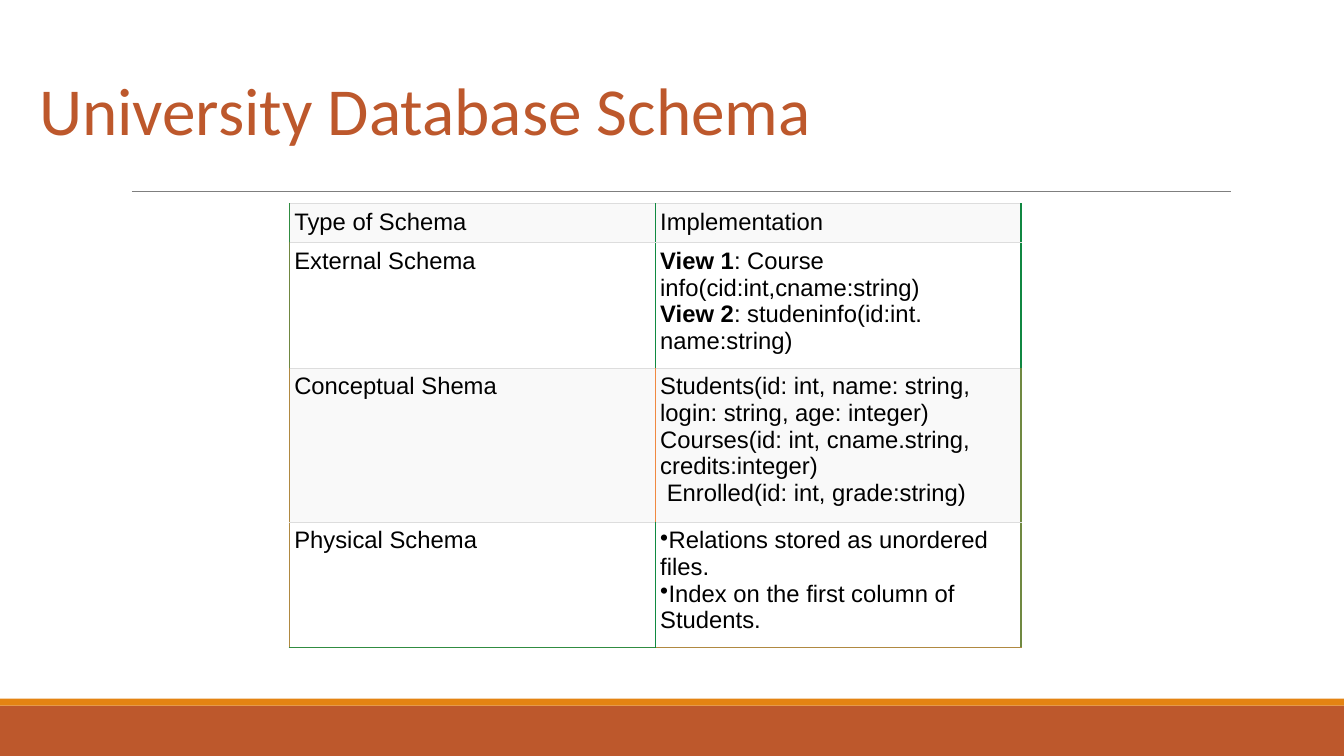
from lxml import etree
from pptx import Presentation
from pptx import util as u
from pptx.dml.color import RGBColor
from pptx.enum import shapes, text
from pptx.oxml.ns import qn

RUST = "BD582C"
ORANGE = "E48312"
GREY = "7F7F7F"
ROW_LINE = "DDDDDD"
BANDS = ("F9F9F9", "FFFFFF")

ROW_HEIGHTS = (28, 89.5, 110, 89.5)
COLUMN_WIDTH = 261.4
# Colours of the vertical lines, left to right, for each row
COLUMN_LINES = (
    ("308C41", "108A41", "108741"),
    ("708741", "108A41", "108741"),
    ("B08941", "F08941", "708941"),
    ("B08941", "108A41", "708941"),
)
BOTTOM_LINES = ("308C41", "B08941")

# Each cell is a list of paragraphs, each paragraph a list of (text, bold)
SCHEMA_ROWS = (
    ([[("Type of Schema", False)]], [[("Implementation", False)]]),
    (
        [[("External Schema", False)]],
        [[("View 1", True), (": Course info(cid:int,cname:string)", False),
          ("\n", False),
          ("View 2", True), (": studeninfo(id:int. name:string)", False)]],
    ),
    (
        [[("Conceptual Shema", False)]],
        [[("Students(id: int, name: string, login: string, age: integer)", False)],
         [("Courses(id: int, cname.string, credits:integer)", False)],
         [(" Enrolled(id: int, grade:string)", False)]],
    ),
    (
        [[("Physical Schema", False)]],
        [[("Relations stored as unordered files.", False)],
         [("Index on the first column of Students.", False)]],
    ),
)


def colour(value):
    return RGBColor.from_string(value)


def add_span(para, words, font, size, ink, bold=False):
    span = para.add_run()
    span.text = words
    span.font.name = font
    span.font.size = u.Pt(size)
    span.font.bold = bold
    span.font.color.rgb = colour(ink)


def add_band(page, top, height, fill):
    band = page.shapes.add_shape(
        shapes.MSO_SHAPE.RECTANGLE, 0, u.Pt(top), u.Pt(960), u.Pt(height))
    band.shadow.inherit = False
    band.fill.solid()
    band.fill.fore_color.rgb = colour(fill)
    band.line.fill.background()


def add_rule(page, left, right, y):
    rule = page.shapes.add_connector(
        shapes.MSO_CONNECTOR.STRAIGHT, u.Pt(left), u.Pt(y), u.Pt(right), u.Pt(y))
    rule.line.color.rgb = colour(GREY)
    rule.line.width = u.Pt(0.75)
    etree.SubElement(rule._element.spPr, qn("a:effectLst"))


def add_title(page, words):
    box = page.shapes.add_textbox(u.Pt(20.9), u.Pt(22.3), u.Pt(857.5), u.Pt(87.8))
    frame = box.text_frame
    frame.word_wrap = True
    frame.vertical_anchor = text.MSO_ANCHOR.BOTTOM
    para = frame.paragraphs[0]
    para.line_spacing = 0.85
    add_span(para, words, "Calibri", 48, RUST)


def set_borders(cell, borders):
    """Draw borders given as (side, colour, width), in the order L, R, T, B."""
    properties = cell._tc.get_or_add_tcPr()
    for place, (side, ink, width) in enumerate(borders):
        line = etree.Element(qn(f"a:ln{side}"), w=str(u.Pt(width)))
        fill = etree.SubElement(line, qn("a:solidFill"))
        etree.SubElement(fill, qn("a:srgbClr"), val=ink)
        properties.insert(place, line)


def add_bullet(para):
    properties = para._p.get_or_add_pPr()
    properties.set("marL", "0")
    properties.set("indent", str(u.Pt(-8.64)))
    ink = etree.SubElement(properties, qn("a:buClr"))
    etree.SubElement(ink, qn("a:srgbClr"), val="000000")
    etree.SubElement(properties, qn("a:buChar"), char="•")


def fill_cell(cell, paragraphs, fill, bulleted):
    cell.fill.solid()
    cell.fill.fore_color.rgb = colour(fill)
    cell.margin_left = cell.margin_right = u.Pt(3.6)
    cell.margin_top = cell.margin_bottom = u.Pt(3.6)
    frame = cell.text_frame
    for index, spans in enumerate(paragraphs):
        para = frame.add_paragraph() if index else frame.paragraphs[0]
        if bulleted:
            add_bullet(para)
        for words, bold in spans:
            if words == "\n":
                para.add_line_break()
            else:
                add_span(para, words, "Arial", 17, "000000", bold)


def add_schema_table(page):
    table = page.shapes.add_table(
        len(SCHEMA_ROWS), 2, u.Pt(206.6), u.Pt(145.4),
        u.Pt(2 * COLUMN_WIDTH), u.Pt(sum(ROW_HEIGHTS))).table
    table.first_row = False
    table.horz_banding = False
    for column in table.columns:
        column.width = u.Pt(COLUMN_WIDTH)
    last = len(SCHEMA_ROWS) - 1
    for r, cells in enumerate(SCHEMA_ROWS):
        table.rows[r].height = u.Pt(ROW_HEIGHTS[r])
        for c, paragraphs in enumerate(cells):
            cell = table.cell(r, c)
            fill_cell(cell, paragraphs, BANDS[r % 2], r == last and c == 1)
            bottom = (BOTTOM_LINES[c], 1) if r == last else (ROW_LINE, 0.75)
            set_borders(cell, (
                ("L", COLUMN_LINES[r][c], 1),
                ("R", COLUMN_LINES[r][c + 1], 1),
                ("T", ROW_LINE, 0.75),
                ("B", *bottom),
            ))


def main():
    deck = Presentation()
    deck.slide_width, deck.slide_height = u.Pt(960), u.Pt(540)
    page = deck.slides.add_slide(deck.slide_layouts[6])
    add_band(page, 504, 36, RUST)
    add_band(page, 499, 5, ORANGE)
    add_rule(page, 94.3, 879.1, 136.8)
    add_title(page, "University Database Schema")
    add_schema_table(page)
    deck.save("out.pptx")


if __name__ == "__main__":
    main()
